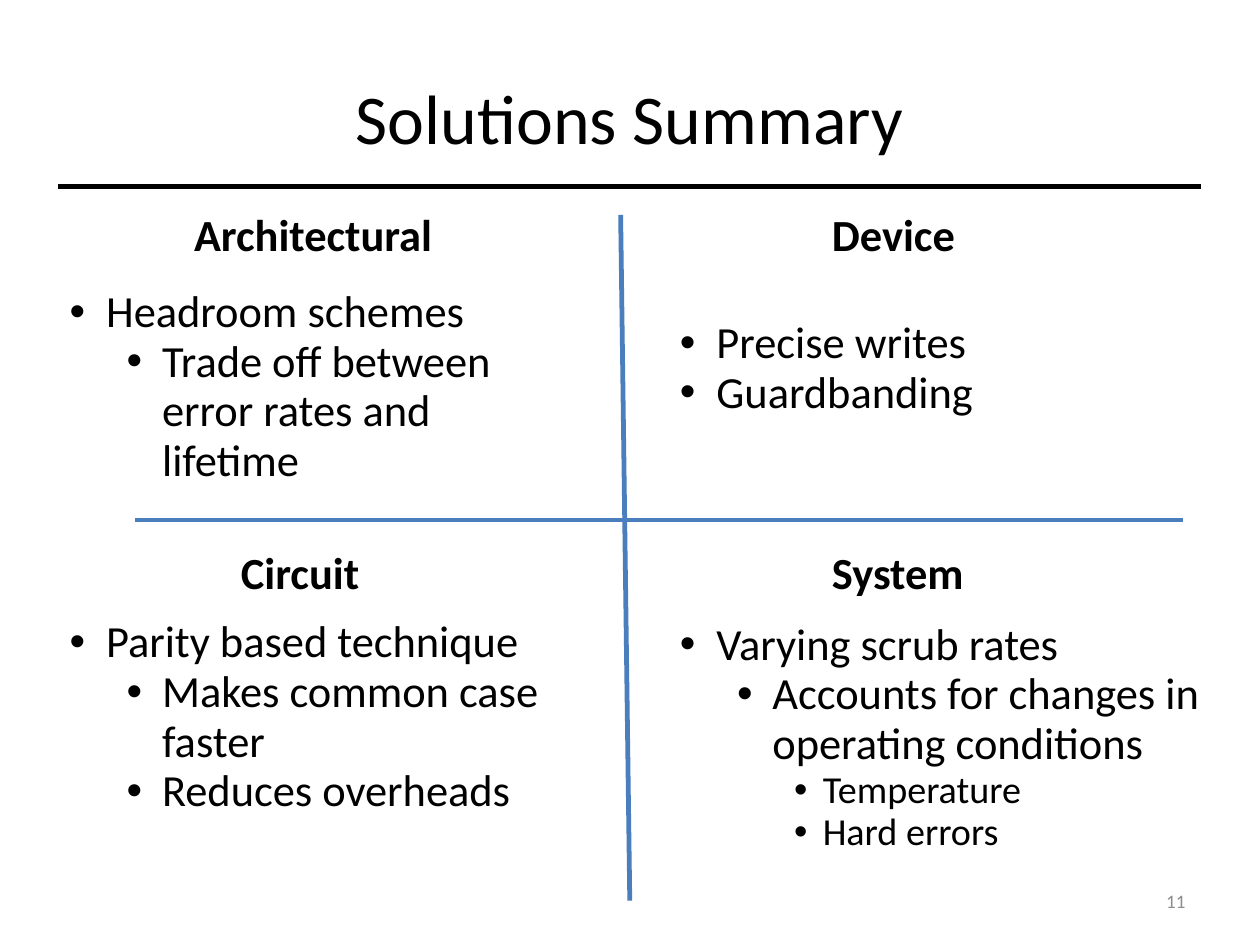
"""Build the Solutions Summary slide: four quadrants of headed bullet lists."""
from lxml.etree import SubElement
from pptx import Presentation
from pptx.dml.color import RGBColor
from pptx.enum.shapes import MSO_CONNECTOR as Connector
from pptx.enum.text import MSO_ANCHOR as Anchor, PP_ALIGN as Align
from pptx.oxml.ns import qn
from pptx.util import Cm, Inches, Pt

BLACK, BLUE, GRAY = "000000", "4B7EBC", "8C8C8C"
FONT = "Calibri"
TITLE = "Solutions Summary"
PAGE_NUMBER = "11"

# heading, heading box, list box, (level, text) items
QUADRANTS = [
    ("Architectural", (1.6, 1.8, 2.92, 0.54), (0.51, 2.47, 4.58, 1.85),
     [(0, "Headroom schemes"),
      (1, "Trade off between error rates and lifetime")]),
    ("Device", (7.18, 1.8, 1.58, 0.54), (5.85, 2.74, 4.58, 0.98),
     [(0, "Precise writes"), (0, "Guardbanding")]),
    ("Circuit", (2.01, 4.76, 1.58, 0.54), (0.51, 5.36, 4.58, 1.85),
     [(0, "Parity based technique"),
      (1, "Makes common case faster"),
      (1, "Reduces overheads")]),
    ("System", (7.18, 4.76, 1.58, 0.54), (5.85, 5.38, 4.75, 2.17),
     [(0, "Varying scrub rates"),
      (1, "Accounts for changes in operating conditions"),
      (2, "Temperature"),
      (2, "Hard errors")]),
]
# text indent, hanging bullet, font size for each level
LEVELS = [(0.32, -0.32, 28), (0.81, -0.31, 28), (1.25, -0.25, 24)]
RULES = [
    ((0.51, 1.63), (10.51, 1.63), BLACK),
    ((5.43, 1.88), (5.51, 7.88), BLUE),
    ((1.18, 4.55), (10.35, 4.55), BLUE),
]


def color(value):
    return RGBColor.from_string(value)


def style(para, size, fill=BLACK, bold=False):
    for span in para.runs:
        span.font.name = FONT
        span.font.size = Pt(size)
        span.font.bold = bold
        span.font.color.rgb = color(fill)


def add_box(page, area):
    box = page.shapes.add_textbox(*map(Inches, area))
    box.text_frame.word_wrap = True
    return box.text_frame


def add_rule(page, start, end, fill):
    rule = page.shapes.add_connector(
        Connector.STRAIGHT, *map(Inches, start + end))
    rule.line.color.rgb = color(fill)
    rule.line.width = Pt(3)
    SubElement(rule._element.spPr, qn("a:effectLst"))


def add_bullet(para, level):
    indent, hanging, size = LEVELS[level]
    para.level = level
    properties = para._p.get_or_add_pPr()
    properties.set("marL", str(Inches(indent)))
    properties.set("indent", str(Inches(hanging)))
    tint = SubElement(properties, qn("a:buClr"))
    SubElement(tint, qn("a:srgbClr"), val=BLACK)
    SubElement(properties, qn("a:buFont"), typeface="Arial")
    SubElement(properties, qn("a:buChar"), char="•")
    para.line_spacing = 0.93
    style(para, size)


def add_quadrant(page, heading, heading_area, list_area, items):
    para = add_box(page, heading_area).paragraphs[0]
    para.text = heading
    para.line_spacing = 0.93
    style(para, 28, bold=True)
    frame = add_box(page, list_area)
    frame.text = "\n".join(text for level, text in items)
    for para, (level, text) in zip(frame.paragraphs, items):
        add_bullet(para, level)


def main():
    deck = Presentation()
    deck.slide_width, deck.slide_height = Cm(28), Cm(21)
    page = deck.slides.add_slide(deck.slide_layouts[5])

    title = page.shapes.title
    title.left, title.top, title.width, title.height = map(
        Inches, (0.55, 0.33, 9.92, 1.38))
    title.text_frame.text = TITLE
    title.text_frame.vertical_anchor = Anchor.MIDDLE
    title.text_frame.paragraphs[0].alignment = Align.CENTER
    style(title.text_frame.paragraphs[0], 44)

    for start, end, fill in RULES:
        add_rule(page, start, end, fill)
    for quadrant in QUADRANTS:
        add_quadrant(page, *quadrant)

    number = add_box(page, (7.9, 7.66, 2.57, 0.44))
    number.text = PAGE_NUMBER
    number.vertical_anchor = Anchor.MIDDLE
    number.paragraphs[0].alignment = Align.RIGHT
    style(number.paragraphs[0], 12, GRAY)
    deck.save("out.pptx")


if __name__ == "__main__":
    main()
